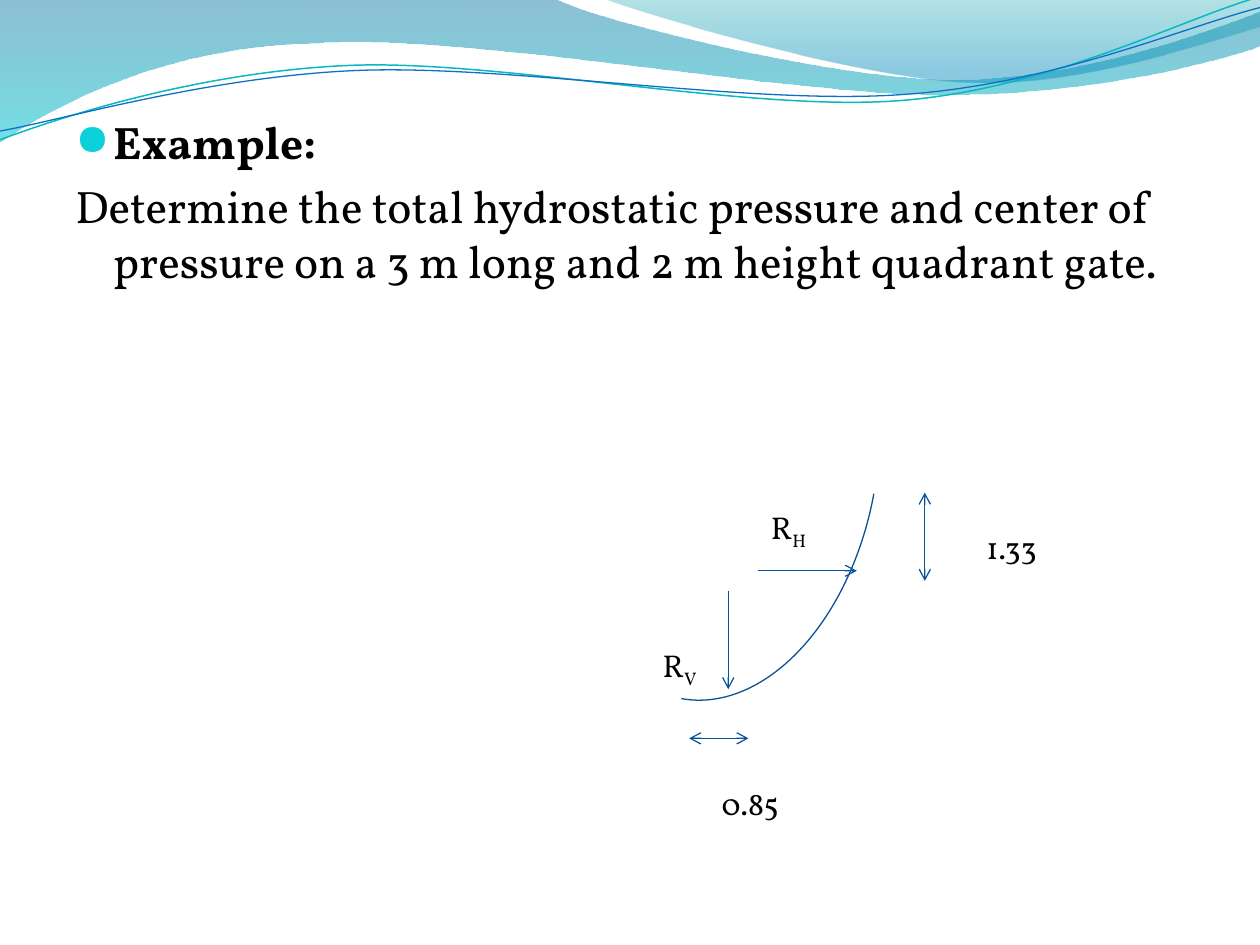
"""Build the quadrant gate hydrostatic pressure slide."""
from pptx import Presentation, util as u
from pptx.dml.color import RGBColor
from pptx.enum import shapes
from pptx.oxml.xmlchemy import OxmlElement

BLACK = RGBColor(0, 0, 0)
CYAN = RGBColor(0x0B, 0xD0, 0xD9)
NAVY = RGBColor(0x09, 0x52, 0x95)
TEAL = RGBColor(0x0A, 0xB8, 0xBF)
BLUE = RGBColor(0x0F, 0x6F, 0xC6)
DEEP_BLUE = RGBColor(0x00, 0x74, 0xA1)
AQUA = RGBColor(0x00, 0xC6, 0xCF)
DARK_TEAL = RGBColor(0x00, 0xA1, 0xA9)
SKY = RGBColor(0x00, 0x8B, 0xBF)
FONT = "Vollkorn"

BANDS = [
    ([(DEEP_BLUE, 0, 45), (AQUA, 1, 55)], (0, 0), [
        [(4.4, -0.01)],
        [(4.76, 0.17), (6.64, 0.63), (7.58, 0.63)],
        [(8.53, 0.63), (9.58, 0.26), (10, 0.09)],
        [(10.01, 0.36)],
        [(9.83, 0.44), (8.7, 0.76), (7.46, 0.75)],
        [(6.22, 0.75), (3.82, 0.28), (2.57, 0.34)],
        [(1.29, 0.36), (0.46, 0.83), (-0.01, 1.13)]]),
    ([(DARK_TEAL, 0, 30), (SKY, 0.8, 45)], (4.79, -0.01), [
        [(5.09, 0.11), (6.82, 0.62), (7.69, 0.65)],
        [(8.56, 0.69), (9.61, 0.32), (10, 0.21)],
        [(10, 0)]]),
]
WAVES = [
    (TEAL, 0.85, (0, 1.11), [
        [(0.48, 0.93), (1.58, 0.57), (2.77, 0.52)],
        [(3.95, 0.47), (5.93, 0.89), (7.13, 0.8)],
        [(8.33, 0.71), (9.38, 0.15), (9.98, -0.02)]]),
    (BLUE, 0.75, (0, 1.04), [
        [(0.47, 0.96), (1.64, 0.61), (2.83, 0.56)],
        [(4.03, 0.51), (5.97, 0.84), (7.17, 0.75)],
        [(8.36, 0.67), (9.41, 0.21), (10, 0.06)]]),
]
BODY = [
    ("Example:", True),
    ("Determine the total hydrostatic pressure and center of pressure "
     "on a 3 m long and 2 m height quadrant gate.", False),
]
ARROWS = [
    ((6.02, 4.53), (6.8, 4.53), ["tailEnd"]),
    ((5.78, 4.69), (5.78, 5.47), ["tailEnd"]),
    ((7.34, 3.91), (7.34, 4.61), ["headEnd", "tailEnd"]),
    ((5.47, 5.86), (5.94, 5.86), ["headEnd", "tailEnd"]),
]
LABELS = [
    (6.02, 3.98, 0.55, "R", "H"),
    (5.16, 5.08, 0.55, "R", "V"),
    (7.73, 4.14, 0.7, "1.33", ""),
    (5.63, 6.17, 0.7, "0.85", ""),
]


def add_xml(parent, tag, **attrs):
    el = OxmlElement(tag)
    for name, value in attrs.items():
        el.set(name, value)
    parent.append(el)
    return el


def set_line(s, color, width):
    s.line.color.rgb = color
    s.line.width = u.Pt(width)


def add_curve(slide, start, segments, close):
    fb = slide.shapes.build_freeform(*map(u.Inches, start), scale=1.0)
    for seg in segments:
        fb.add_line_segments([(u.Inches(x), u.Inches(y)) for x, y in seg], close=False)
    if close:
        fb.add_line_segments([], close=True)
    s = fb.convert_to_shape()
    s.shadow.inherit = False
    steps = iter(s._element.xpath(".//a:lnTo"))
    for seg in segments:
        group = [next(steps) for _ in seg]
        if len(group) == 3:
            bez = OxmlElement("a:cubicBezTo")
            group[0].addprevious(bez)
            for step in group:
                bez.append(step[0])
                step.getparent().remove(step)
    return s


def add_band(slide, stops, start, segments):
    s = add_curve(slide, start, segments, True)
    s.line.fill.background()
    s.fill.gradient()
    s.fill.gradient_angle = 270
    for stop, (color, pos, opacity) in zip(s.fill.gradient_stops, stops):
        stop.color.rgb = color
        stop.position = pos
    for el, (_, _, opacity) in zip(s._element.xpath(".//a:gs/a:srgbClr"), stops):
        add_xml(el, "a:alpha", val=str(opacity * 1000))


def add_wave(slide, color, width, start, segments):
    s = add_curve(slide, start, segments, False)
    s.fill.background()
    set_line(s, color, width)


def add_box(slide, *box):
    tf = slide.shapes.add_textbox(*map(u.Inches, box)).text_frame
    tf.word_wrap = True
    return tf


def add_run(p, words, size, bold=False):
    r = p.add_run()
    r.text = words
    r.font.color.rgb = BLACK
    for name, value in dict(name=FONT, size=u.Pt(size), bold=bold).items():
        setattr(r.font, name, value)
    return r


def add_body(slide):
    tf = add_box(slide, 0.5, 0.86, 9, 6.06)
    for i, (words, heading) in enumerate(BODY):
        p = tf.add_paragraph() if i else tf.paragraphs[0]
        p.space_before = u.Pt(5.2)
        pPr = p._p.get_or_add_pPr()
        pPr.set("marL", str(u.Inches(0.3)))
        pPr.set("indent", str(u.Inches(-0.3)))
        if heading:
            add_xml(add_xml(pPr, "a:buClr"), "a:srgbClr", val=str(CYAN))
            add_xml(pPr, "a:buSzPct", val="95000")
            add_xml(pPr, "a:buChar", char="●")
        else:
            add_xml(pPr, "a:buNone")
        add_run(p, words, 26, heading)


def add_gate(slide):
    box = map(u.Inches, (3.87, 2.49, 3.75, 2.42))
    s = slide.shapes.add_shape(shapes.MSO_SHAPE.ARC, *box)
    s.rotation = 100.4
    s.shadow.inherit = False
    s.fill.background()
    set_line(s, NAVY, 0.75)


def add_arrow(slide, start, end, ends):
    s = slide.shapes.add_connector(
        shapes.MSO_CONNECTOR.STRAIGHT, *map(u.Inches, start + end))
    set_line(s, NAVY, 0.75)
    for tag in ends:
        add_xml(s.line._get_or_add_ln(), f"a:{tag}", type="arrow")
    add_xml(s._element.spPr, "a:effectLst")


def add_label(slide, left, top, width, words, subscript):
    p = add_box(slide, left, top, width, 0.4).paragraphs[0]
    add_run(p, words, 18)
    if subscript:
        r = add_run(p, subscript, 18)
        r._r.get_or_add_rPr().set("baseline", "-25000")


def main():
    prs = Presentation()
    prs.slide_width, prs.slide_height = u.Inches(10), u.Inches(7.5)
    slide = prs.slides.add_slide(prs.slide_layouts[6])
    for band in BANDS:
        add_band(slide, *band)
    for wave in WAVES:
        add_wave(slide, *wave)
    add_body(slide)
    add_gate(slide)
    for arrow in ARROWS:
        add_arrow(slide, *arrow)
    for label in LABELS:
        add_label(slide, *label)
    prs.save("out.pptx")


if __name__ == "__main__":
    main()
